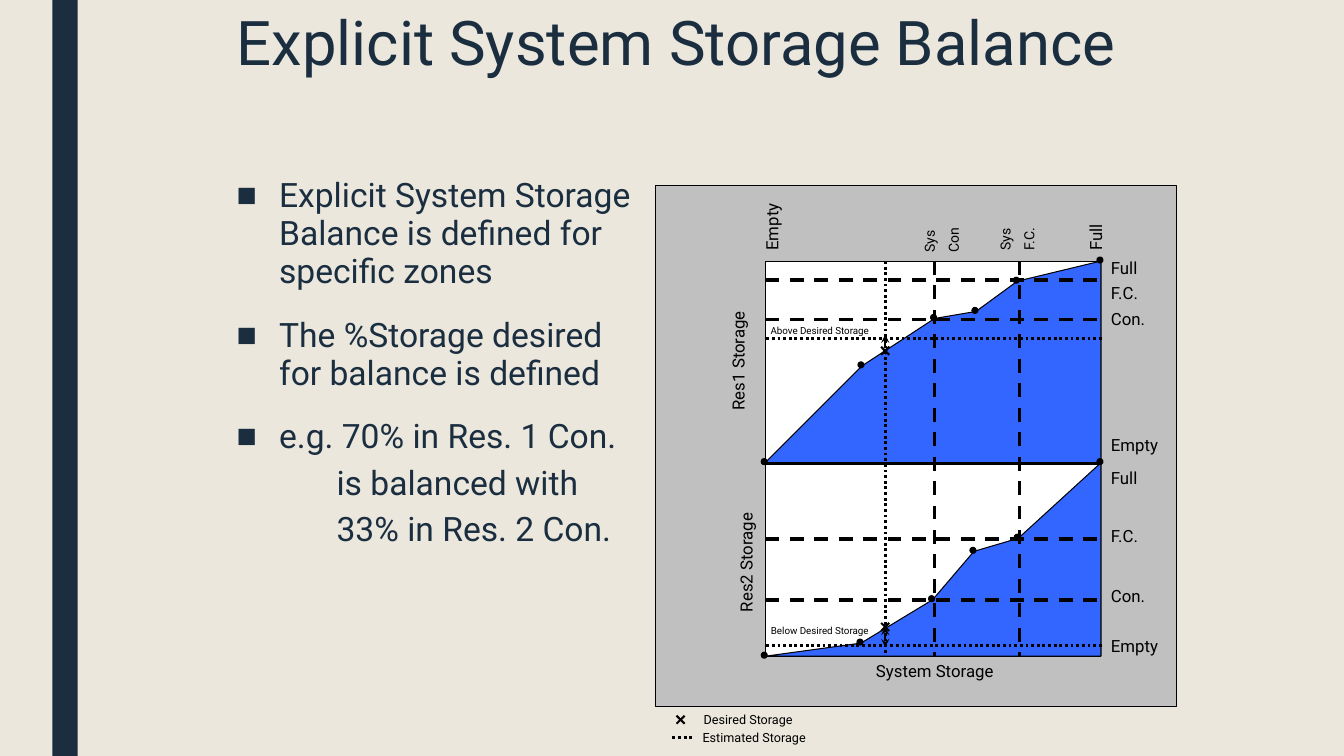
from lxml.etree import SubElement
from pptx import Presentation
from pptx.dml.color import RGBColor
from pptx.enum.dml import MSO_LINE
from pptx.enum.shapes import MSO_CONNECTOR, MSO_SHAPE
from pptx.enum.text import PP_ALIGN
from pptx.oxml.ns import qn
from pptx.util import Cm, Pt

NAVY = RGBColor(0x1A, 0x2E, 0x40)
CREAM = RGBColor(0xEB, 0xE7, 0xDD)
GRAY = RGBColor(0xC0, 0xC0, 0xC0)
BLUE = RGBColor(0x33, 0x66, 0xFF)
WHITE = RGBColor(0xFF, 0xFF, 0xFF)
BLACK = RGBColor(0, 0, 0)
FONT = "Roboto"

# Chart frame, in inches
LEFT, RIGHT, TOP, MID, BASE = 7.59, 10.92, 2.59, 4.59, 6.51


def size(inch):
    return Cm(inch * 2.54)


class Page:
    def __init__(self, slide):
        self.slide = slide
        self.shapes = slide.shapes
        fill = slide.background.fill
        fill.solid()
        fill.fore_color.rgb = CREAM

    def paint(self, shape, fill, line):
        shape.shadow.inherit = False
        shape.fill.solid()
        shape.fill.fore_color.rgb = fill
        if line is None:
            shape.line.fill.background()
        else:
            shape.line.color.rgb = line
            shape.line.width = Pt(0.75)

    def shape(self, kind, x, y, w, h, fill, line=BLACK):
        item = self.shapes.add_shape(kind, *map(size, (x, y, w, h)))
        self.paint(item, fill, line)

    def area(self, points):
        spots = [(size(x), size(y)) for x, y in points]
        form = self.shapes.build_freeform(*spots[0])
        form.add_line_segments(spots[1:], close=True)
        self.paint(form.convert_to_shape(), BLUE, BLACK)

    def line(self, x1, y1, x2, y2, width, dash=None, arrows=False):
        item = self.shapes.add_connector(
            MSO_CONNECTOR.STRAIGHT, *map(size, (x1, y1, x2, y2)))
        item.line.color.rgb = BLACK
        item.line.width = Pt(width)
        if dash:
            item.line.dash_style = dash
        if arrows:
            for end in ("a:headEnd", "a:tailEnd"):
                SubElement(item.get_or_add_ln(), qn(end), type="stealth")
        SubElement(item._element.spPr, qn("a:effectLst"))

    def cross(self, x, y):
        for d in (0.04, -0.04):
            self.line(x - d, y - 0.04, x + d, y + 0.04, 1.5)

    def dot(self, x, y):
        self.shape(MSO_SHAPE.OVAL, x - 0.03, y - 0.03, 0.06, 0.06, BLACK)

    def box(self, x, y, w, h):
        item = self.shapes.add_textbox(*map(size, (x, y, w, h)))
        item.text_frame.word_wrap = True
        return item

    def run(self, para, text, pt, color=BLACK):
        run = para.add_run()
        run.text = text
        run.font.size = Pt(pt)
        run.font.name = FONT
        run.font.color.rgb = color

    def label(self, x, y, w, h, rows, pt=12, turn=0, align=PP_ALIGN.LEFT):
        item = self.box(x, y, w, h)
        item.rotation = turn
        frame = item.text_frame
        for n, text in enumerate(rows):
            para = frame.add_paragraph() if n else frame.paragraphs[0]
            para.alignment = align
            if n:
                para.space_before = Pt(pt / 2)
            self.run(para, text, pt)

    def title(self, text):
        para = self.box(2.25, 0.08, 10.75, 1.19).text_frame.paragraphs[0]
        para.line_spacing = 0.89
        self.run(para, text, 44, NAVY)

    def body(self, rows):
        frame = self.box(2.25, 1.71, 4.17, 4.96).text_frame
        for n, (text, mark) in enumerate(rows):
            para = frame.add_paragraph() if n else frame.paragraphs[0]
            para.line_spacing = 0.94
            para.space_after = Pt(2)
            if n:
                para.space_before = Pt(16.5 if mark else 4)
            props = para._p.get_or_add_pPr()
            props.set("marL", str(size(0.42 if mark else 0.99)))
            props.set("indent", str(size(-0.42 if mark else 0)))
            if mark:
                SubElement(props, qn("a:buFont"), typeface="Arial")
                SubElement(props, qn("a:buChar"), char="■")
            self.run(para, text, 24, NAVY)


def main():
    deck = Presentation()
    deck.slide_width, deck.slide_height = size(13.33), size(7.5)
    page = Page(deck.slides.add_slide(deck.slide_layouts[6]))
    rect = MSO_SHAPE.RECTANGLE

    # Side bar, bullets and title
    page.shape(rect, 0.52, 0, 0.25, 7.5, NAVY, None)
    page.body([
        ("Explicit System Storage Balance is defined for specific zones", True),
        ("The %Storage desired for balance is defined", True),
        ("e.g. 70% in Res. 1 Con.", True),
        ("is balanced with", False),
        ("33% in Res. 2 Con.", False),
    ])
    page.title("Explicit System Storage Balance")

    # Panel and plot frame
    page.shape(rect, 6.5, 1.84, 5.17, 5.17, GRAY)
    page.shape(rect, LEFT, TOP, RIGHT - LEFT, BASE - TOP, WHITE)
    page.line(LEFT, MID, RIGHT, MID, 3)

    # Axis names and zone names
    page.label(8.59, 6.51, 1.5, 0.3, ["System Storage"])
    page.label(6.57, 3.27, 1.5, 0.3, ["Res1 Storage"], turn=270)
    page.label(6.65, 5.27, 1.5, 0.3, ["Res2 Storage"], turn=270)
    for text, y in (("Full", 2.51), ("F.C.", 2.76), ("Con.", 3.01),
                    ("Empty", 4.26), ("Full", 4.59), ("F.C.", 5.17),
                    ("Con.", 5.76), ("Empty", 6.26)):
        page.label(RIGHT, y, 0.67, 0.3, [text])
    for text, x in (("Empty", 7.32), ("Full", 10.53)):
        page.label(x, 2.1, 0.67, 0.3, [text], turn=270)
    for text, x, y in (("Con", 9.01, 2.01), ("F.C.", 9.76, 1.99)):
        page.label(x, y, 0.67, 0.52, ["Sys", text], 10, 270)

    # Storage curves
    upper = [(LEFT, MID), (8.55, 3.63), (9.27, 3.16), (9.68, 3.09),
             (10.09, 2.79), (RIGHT, TOP)]
    lower = [(LEFT, BASE), (8.54, 6.38), (9.25, 5.95), (9.66, 5.47),
             (10.1, 5.34), (RIGHT, MID)]
    for curve, floor in ((lower, BASE), (upper, MID)):
        page.area(curve + [(RIGHT, floor)])

    # Zone limits
    for y in (2.78, 3.17, 5.35, 5.95):
        page.line(LEFT, y, RIGHT, y, 2.5, MSO_LINE.DASH)
    for x in (9.27, 10.11):
        page.line(x, TOP, x, BASE, 2.5, MSO_LINE.DASH)

    # Desired and estimated storage
    now = 8.78
    for text, y in (("Above", 3.17), ("Below", 6.15)):
        page.label(7.47, y, 1.32, 0.22, [text + " Desired Storage"], 7,
                   align=PP_ALIGN.CENTER)
    for y in (3.36, 6.4):
        page.line(7.6, y, 10.93, y, 2, MSO_LINE.ROUND_DOT)
    page.line(now, TOP, now, BASE, 2, MSO_LINE.ROUND_DOT)
    for mark, tip in ((3.48, 3.32), (6.22, 6.22)):
        page.cross(now, mark)
        page.line(now, tip, now, tip + 0.2, 1.5, arrows=True)

    # Curve points
    for x, y in upper + lower:
        page.dot(x - 0.01, y - 0.01)

    # Legend
    page.cross(6.75, 7.14)
    page.line(6.67, 7.32, 6.87, 7.32, 2, MSO_LINE.ROUND_DOT)
    for text, x, y in (("Desired Storage", 6.74, 7.01),
                       ("Estimated Storage", 6.8, 7.19)):
        page.label(x, y, 1.36, 0.25, [text], 9, align=PP_ALIGN.CENTER)

    deck.save("out.pptx")


if __name__ == "__main__":
    main()
